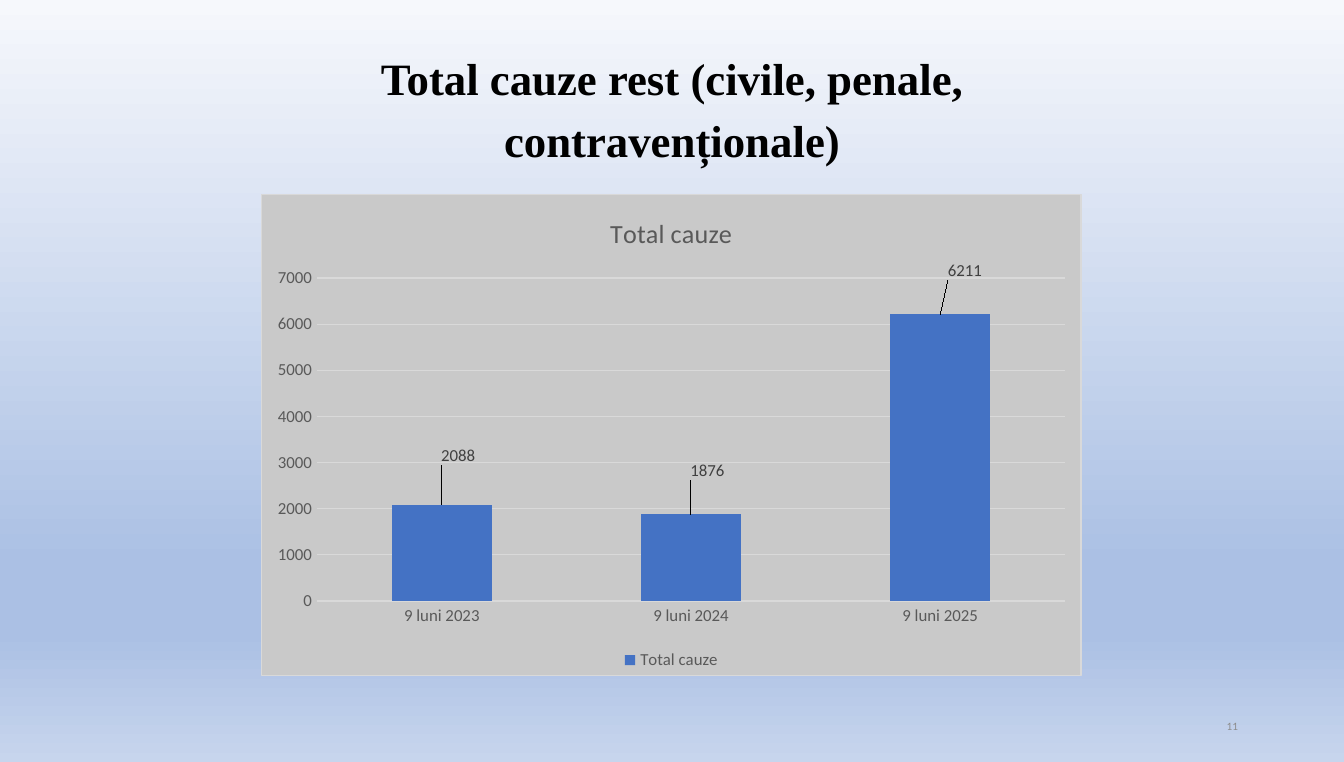
"""Build a slide with a column chart of the total remaining court cases."""
from lxml import etree
from pptx import Presentation
from pptx.chart.data import CategoryChartData
from pptx.dml.color import RGBColor
from pptx.enum.chart import XL_CHART_TYPE as ChartType
from pptx.enum.chart import XL_LABEL_POSITION as LabelPosition
from pptx.enum.chart import XL_LEGEND_POSITION as LegendPosition
from pptx.enum.chart import XL_TICK_MARK as TickMark
from pptx.enum.text import MSO_ANCHOR as Anchor
from pptx.enum.text import PP_ALIGN as Align
from pptx.oxml import parse_xml
from pptx.oxml.ns import nsdecls, qn
from pptx.util import Inches, Pt

BLACK = RGBColor(0x00, 0x00, 0x00)
DARK_GRAY = RGBColor(0x40, 0x40, 0x40)
TEXT_GRAY = RGBColor(0x59, 0x59, 0x59)
NUMBER_GRAY = RGBColor(0x8C, 0x8C, 0x8C)
CHART_GRAY = RGBColor(0xC9, 0xC9, 0xC9)
LINE_GRAY = RGBColor(0xD9, 0xD9, 0xD9)
BLUE = RGBColor(0x44, 0x72, 0xC4)
SKY_STOPS = [
    (0, RGBColor(0xF6, 0xF8, 0xFC)),
    (74, RGBColor(0xAB, 0xC0, 0xE4)),
    (83, RGBColor(0xAB, 0xC0, 0xE4)),
    (100, RGBColor(0xC7, 0xD5, 0xED)),
]


def style_font(font, size, color, name="Calibri", bold=False):
    font.size, font.name, font.bold = Pt(size), name, bold
    font.color.rgb = color


def write_text(frame, text, align, spacing, anchor, **style):
    frame.word_wrap = True
    frame.vertical_anchor = anchor
    para = frame.paragraphs[0]
    para.alignment, para.line_spacing = align, spacing
    span = para.add_run()
    span.text = text
    style_font(span.font, **style)


deck = Presentation()
deck.slide_width, deck.slide_height = Inches(10), Inches(5.67)
page = deck.slides.add_slide(deck.slide_layouts[5])

sky = page.background.fill
sky.gradient()
sky.gradient_angle = 270
stop_list = next(page.element.iter(qn("a:gsLst")))
for stop in list(stop_list):
    stop_list.remove(stop)
for percent, color in SKY_STOPS:
    stop = etree.SubElement(stop_list, qn("a:gs"), pos=str(percent * 1000))
    etree.SubElement(stop, qn("a:srgbClr"), val=str(color))

title = page.shapes.title
title.left, title.top = Inches(2.5), Inches(0.27)
title.width, title.height = Inches(5), Inches(1)
write_text(title.text_frame, "Total cauze rest (civile, penale, contravenționale)",
           Align.CENTER, 1.15, Anchor.TOP,
           size=24, color=BLACK, name="Times New Roman", bold=True)

number_box = page.shapes.add_textbox(Inches(7.06), Inches(5.26), Inches(2.25), Inches(0.3))
write_text(number_box.text_frame, "11", Align.RIGHT, 0.9, Anchor.MIDDLE,
           size=6, color=NUMBER_GRAY)

case_data = CategoryChartData()
case_data.categories = ["9 luni 2023", "9 luni 2024", "9 luni 2025"]
case_data.add_series("Total cauze", [2088, 1876, 6211])
chart = page.shapes.add_chart(ChartType.COLUMN_CLUSTERED, Inches(1.94), Inches(1.44),
                              Inches(6.11), Inches(3.59), case_data).chart
style_font(chart.font, 10, BLACK)
chart.element.find(qn("c:chart")).addnext(parse_xml(
    f'<c:spPr {nsdecls("c", "a")}>'
    f'<a:solidFill><a:srgbClr val="{CHART_GRAY}"/></a:solidFill>'
    f'<a:ln w="{Pt(0.75)}"><a:solidFill><a:srgbClr val="{LINE_GRAY}"/></a:solidFill></a:ln>'
    '</c:spPr>'))

chart.has_title = True
chart.chart_title.text_frame.text = "Total cauze"
chart_heading = chart.chart_title.text_frame.paragraphs[0].runs[0]
style_font(chart_heading.font, 14, TEXT_GRAY)

chart.has_legend = True
chart.legend.position = LegendPosition.BOTTOM
chart.legend.include_in_layout = False
style_font(chart.legend.font, 9, TEXT_GRAY)

for axis in (chart.category_axis, chart.value_axis):
    axis.major_tick_mark = axis.minor_tick_mark = TickMark.NONE
    axis.format.line.fill.background()
    style_font(axis.tick_labels.font, 9, TEXT_GRAY)
grid_line = chart.value_axis.major_gridlines.format.line
grid_line.color.rgb, grid_line.width = LINE_GRAY, Pt(0.75)

plot = chart.plots[0]
plot.gap_width, plot.vary_by_categories = 150, False
columns = plot.series[0]
columns.format.fill.solid()
columns.format.fill.fore_color.rgb = BLUE
labels = columns.data_labels
labels.show_value = True
style_font(labels.font, 9, DARK_GRAY)

label_shifts = [(0.02, -0.07), (0.02, -0.06), (0.03, -0.06)]
for index, (across, down) in enumerate(label_shifts):
    label = columns.points[index].data_label
    style_font(label.font, 9, DARK_GRAY)
    label.position = LabelPosition.OUTSIDE_END
    entry = labels._element.findall(qn("c:dLbl"))[index]
    entry.insert(1, parse_xml(
        f'<c:layout {nsdecls("c")}><c:manualLayout>'
        f'<c:x val="{across}"/><c:y val="{down}"/></c:manualLayout></c:layout>'))

deck.save("out.pptx")
